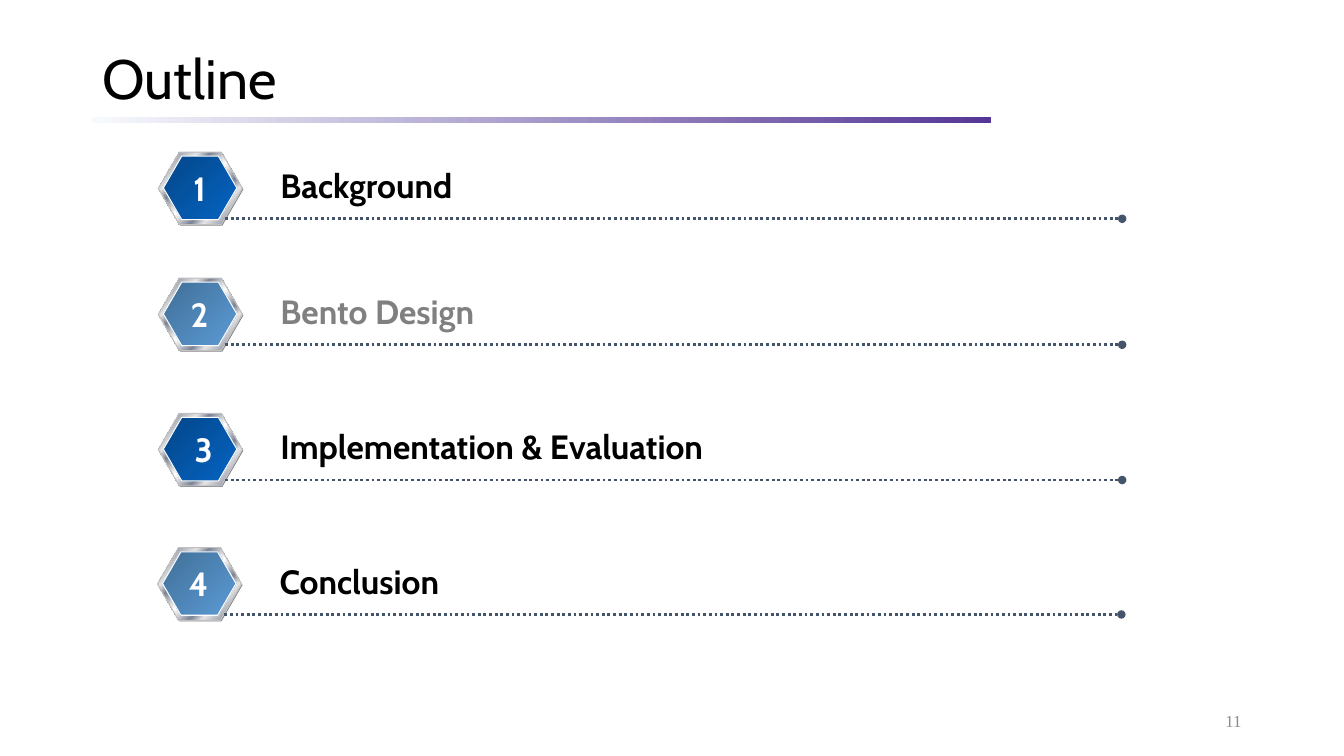
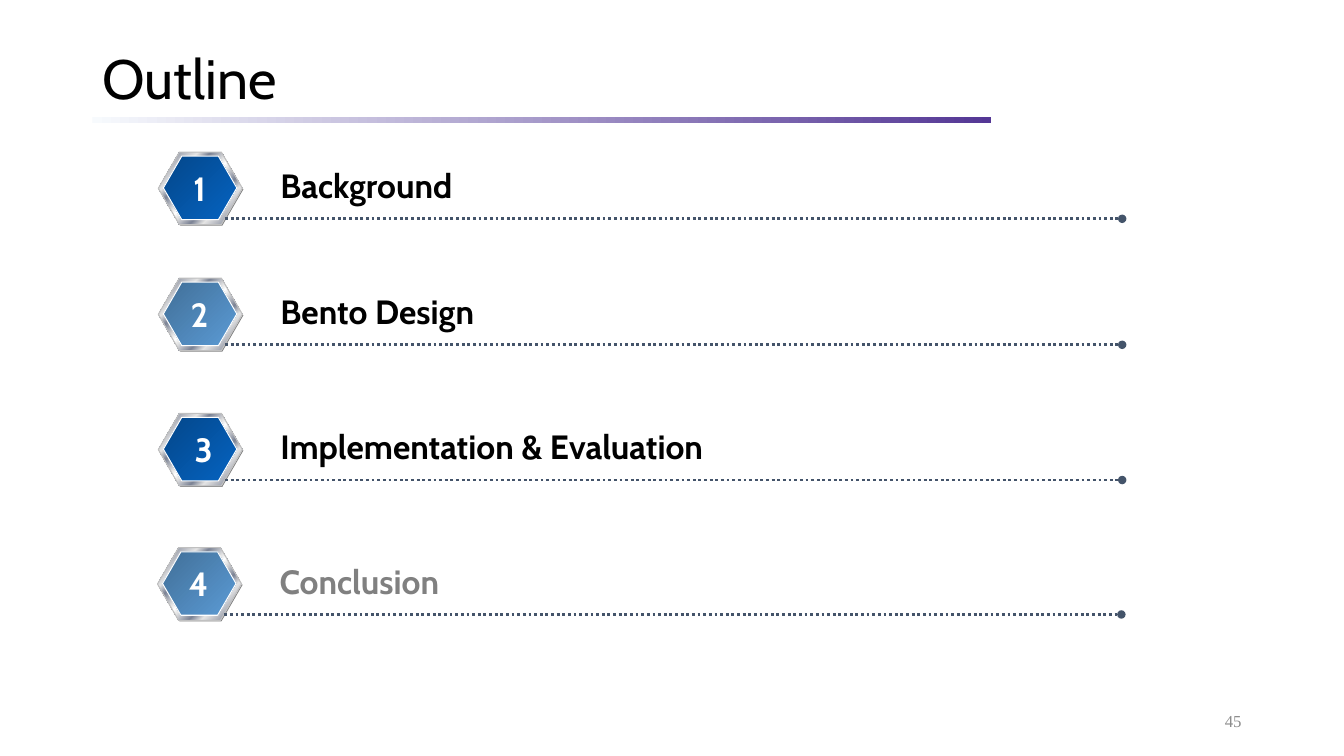
from lxml.etree import SubElement
from pptx import Presentation
from pptx.dml.color import RGBColor
from pptx.enum.dml import MSO_LINE
from pptx.enum.shapes import MSO_CONNECTOR, MSO_SHAPE
from pptx.enum.text import MSO_ANCHOR, PP_ALIGN
from pptx.oxml.ns import qn
from pptx.util import Inches, Pt

# Colours
BLACK = RGBColor(0x00, 0x00, 0x00)
WHITE = RGBColor(0xFF, 0xFF, 0xFF)
GREY = RGBColor(0x80, 0x80, 0x80)
PAGE_GREY = RGBColor(0x8C, 0x8C, 0x8C)
SILVER = RGBColor(0xC0, 0xC0, 0xC0)
SLATE = RGBColor(0x44, 0x54, 0x6A)
STEEL = RGBColor(0x7D, 0x84, 0x96)
PEARL = RGBColor(0xE6, 0xE6, 0xE6)
BAND = [(0, RGBColor(0xF7, 0xFA, 0xFD)), (100, RGBColor(0x54, 0x37, 0x95))]
DARK_BLUE = [(0, RGBColor(0x04, 0x47, 0x8A)), (100, RGBColor(0x05, 0x63, 0xC1))]
LIGHT_BLUE = [(0, RGBColor(0x41, 0x6F, 0x98)), (100, RGBColor(0x5B, 0x9B, 0xD5))]
METAL = [(0, PEARL), (7, STEEL), (26, PEARL), (34, STEEL), (46, PEARL), (50, WHITE),
         (54, PEARL), (66, STEEL), (74, PEARL), (93, STEEL), (100, PEARL)]

# Grid of 160 columns by 90 rows
deck = Presentation()
deck.slide_width, deck.slide_height = Inches(160 / 12), Inches(7.5)
COL, ROW = deck.slide_width / 160, deck.slide_height / 90


def add_text(slide, text, left, top, width, height, *, size, color, font="Cabin",
             bold=False, align=PP_ALIGN.LEFT, anchor=MSO_ANCHOR.TOP, spacing=1.0, inset=0.1):
    box = slide.shapes.add_textbox(int(left * COL), int(top * ROW),
                                   int(width * COL), int(height * ROW))
    frame = box.text_frame
    frame.word_wrap = True
    frame.vertical_anchor = anchor
    frame.margin_left = frame.margin_right = Inches(inset)
    line = frame.paragraphs[0]
    line.text, line.alignment, line.line_spacing = text, align, spacing
    line.font.name, line.font.size, line.font.bold = font, Pt(size), bold
    line.font.color.rgb = color


def add_filled(shapes, kind, left, top, width, height, stops, angle=0, outline=None):
    shape = shapes.add_shape(kind, int(left * COL), int(top * ROW),
                             int(width * COL), int(height * ROW))
    shape.shadow.inherit = False
    if kind == MSO_SHAPE.HEXAGON:
        shape.adjustments[0] = 0.29
    if len(stops) == 1:
        shape.fill.solid()
        shape.fill.fore_color.rgb = stops[0][1]
    else:
        shape.fill.gradient()
        shape.fill.gradient_angle = angle
        stop_list = shape._element.spPr.find(qn("a:gradFill")).find(qn("a:gsLst"))
        stop_list.clear()
        for share, color in stops:
            stop = SubElement(stop_list, qn("a:gs"), pos=str(share * 1000))
            SubElement(stop, qn("a:srgbClr"), val=str(color))
    if outline is None:
        shape.line.fill.background()
    else:
        shape.line.color.rgb = outline
        shape.line.width = Pt(0.75)


# Agenda: heading, top row, badge fill, shift of the row, shift of the digit
AGENDA = [
    ("Background", 18.1, DARK_BLUE, 0, 0),
    ("Bento Design", 33.1, LIGHT_BLUE, 0, 0),
    ("Implementation & Evaluation", 49.2, DARK_BLUE, 0, 0.5),
    ("Conclusion", 65.2, LIGHT_BLUE, -0.1, 0),
]

# One slide per page number and greyed heading
for page, greyed in [("11", "Bento Design"), ("45", "Conclusion")]:
    slide = deck.slides.add_slide(deck.slide_layouts[6])

    # Band, page number and title
    add_filled(slide.shapes, MSO_SHAPE.RECTANGLE, 11, 13.95, 107, 0.65, BAND)
    add_text(slide, page, 113, 83.4, 36, 4.8, size=12, color=PAGE_GREY,
             font="Times New Roman", align=PP_ALIGN.RIGHT, anchor=MSO_ANCHOR.MIDDLE)
    add_text(slide, "Outline", 11, 5.2, 138, 9, size=39.6, color=BLACK,
             anchor=MSO_ANCHOR.MIDDLE, spacing=0.9)

    for number, (heading, top, blues, shift, digit_shift) in enumerate(AGENDA, 1):
        # Badge: shadow, metal rim, blue face
        left = 18.85 + shift
        badge = slide.shapes.add_group_shape().shapes
        add_filled(badge, MSO_SHAPE.HEXAGON, left + 0.12, top + 0.12, 10, 8.65, [(0, GREY)])
        add_filled(badge, MSO_SHAPE.HEXAGON, left, top, 10, 8.65, METAL, 315, SILVER)
        add_filled(badge, MSO_SHAPE.HEXAGON, left + 0.6, top + 0.5, 8.75, 7.55,
                   blues, 315, WHITE)

        # Dotted rule with a round end
        rule_y = int((top + 7.95) * ROW)
        rule = slide.shapes.add_connector(MSO_CONNECTOR.STRAIGHT, int((26.8 + shift) * COL),
                                          rule_y, int((133.6 + shift) * COL), rule_y)
        rule.line.color.rgb = SLATE
        rule.line.width = Pt(2)
        rule.line.dash_style = MSO_LINE.ROUND_DOT
        SubElement(rule.line._get_or_add_ln(), qn("a:tailEnd"), type="oval")
        SubElement(rule._element.spPr, qn("a:effectLst"))

        # Heading and digit
        add_text(slide, heading, 32.2 + shift, top + 0.95, 80, 6, size=24, bold=True,
                 color=GREY if heading == greyed else BLACK)
        add_text(slide, str(number), 21.4 + shift + digit_shift, top + 1.25, 4.7, 6, size=24,
                 bold=True, color=WHITE, align=PP_ALIGN.CENTER, inset=0)

deck.save("out.pptx")
